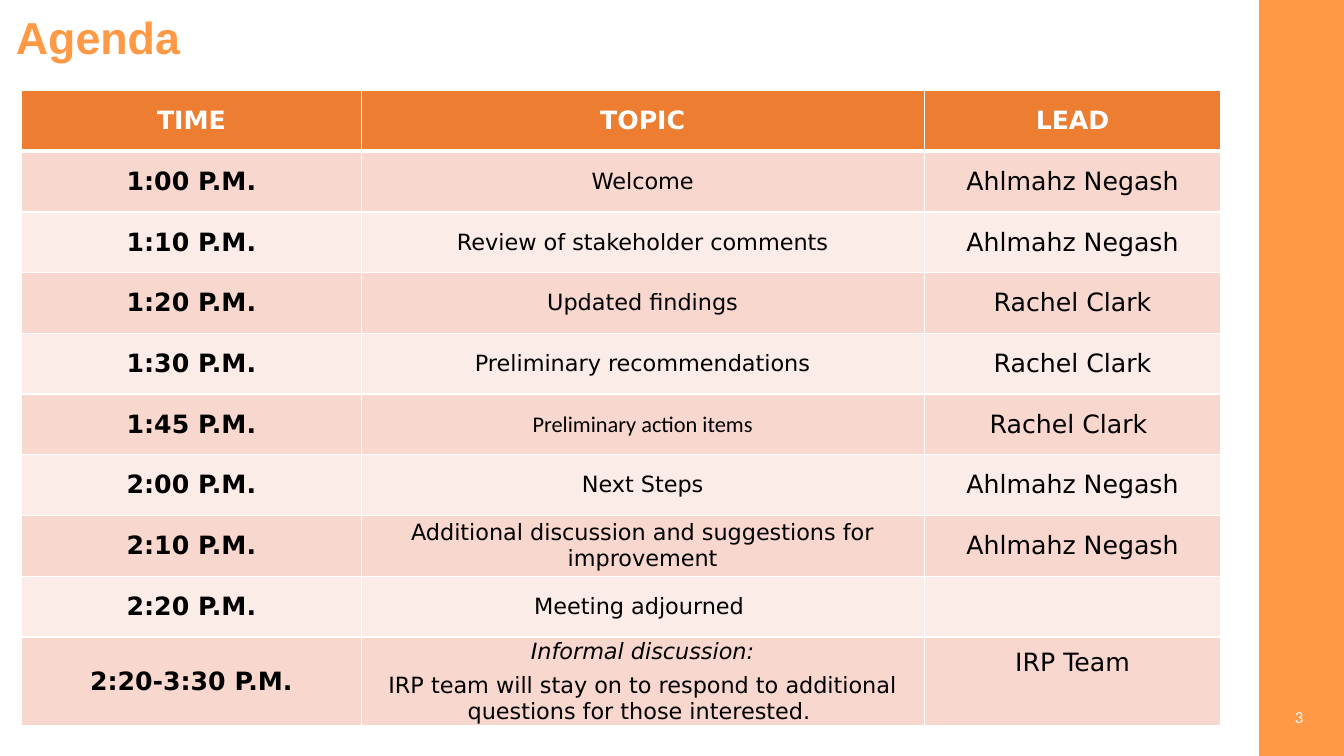
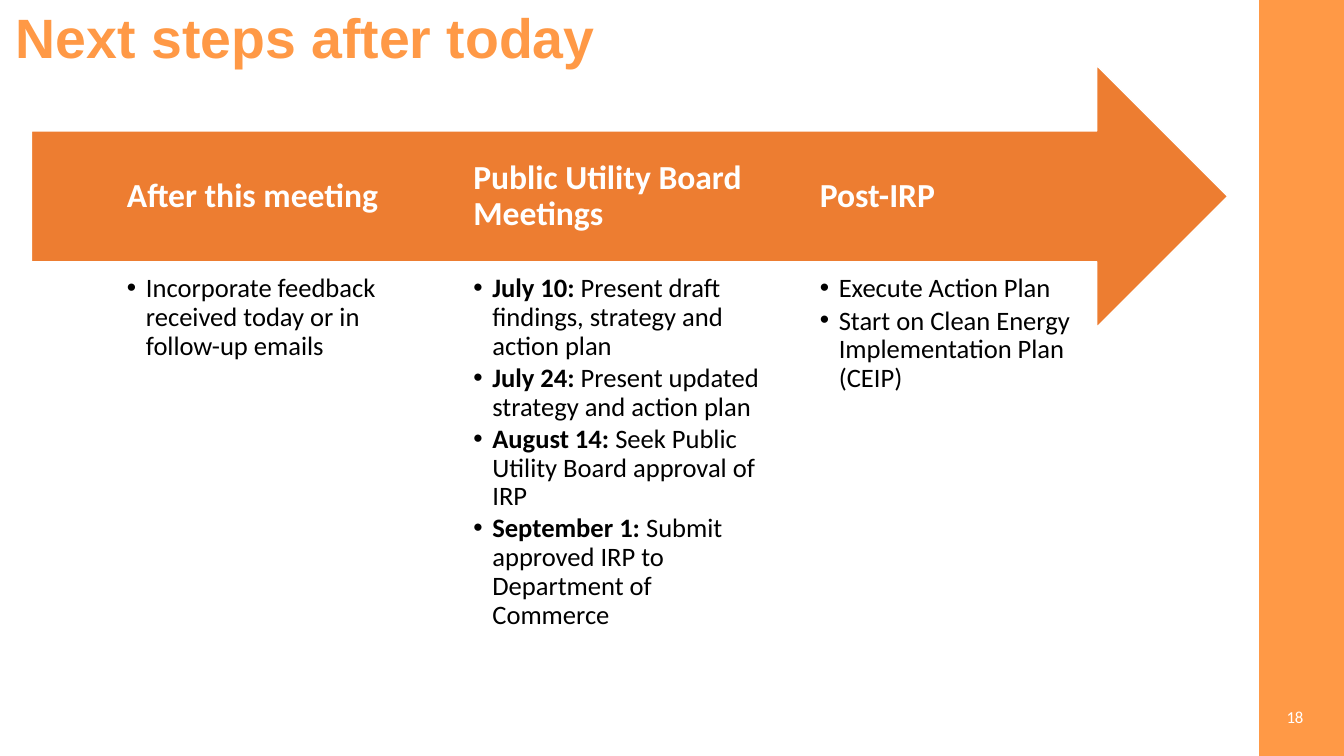
"""Build the agenda and next-steps slides of the planning meeting."""
from dataclasses import dataclass

from lxml import etree
from pptx import Presentation
from pptx import util as u
from pptx.dml.color import RGBColor
from pptx.enum import shapes, text
from pptx.oxml import ns

COLORS = {
    "band": "FF9946",
    "accent": "ED7D31",
    "row_dark": "F8D7CE",
    "row_light": "FCECE8",
    "white": "FFFFFF",
    "black": "000000",
}
TITLE_FONT, BODY_FONT, TABLE_FONT = "Arial", "Calibri", "DejaVu Sans"
SLIDE_WIDTH, SLIDE_HEIGHT = u.Cm(33.87), u.Cm(19.05)
BAND_LEFT = u.Cm(31.75)

TABLE_LEFT, TABLE_TOP = u.Cm(0.55), u.Cm(2.28)
COLUMN_WIDTHS = [u.Cm(8.55), u.Cm(14.19), u.Cm(7.48)]
ROW_HEIGHT, LAST_ROW_HEIGHT = u.Cm(1.53), u.Cm(2.15)
HEADERS = ("TIME", "TOPIC", "LEAD")

STEP_LEFT, STEP_PITCH, STEP_WIDTH = u.Cm(3.2), u.Cm(8.73), u.Cm(7.26)
BULLET_INDENT = u.Cm(0.48)


@dataclass(frozen=True)
class Style:
    font: str
    size: float
    color: str
    bold: bool = False
    italic: bool = False


@dataclass(frozen=True)
class AgendaItem:
    time: str
    topic: str
    lead: str
    topic_font: str = TABLE_FONT
    heading: str = ""
    lead_raise: float = 0


@dataclass(frozen=True)
class Bullet:
    body: str
    date: str = ""


@dataclass(frozen=True)
class Step:
    heading: str
    bullets: tuple[Bullet, ...]


AGENDA = (
    AgendaItem("1:00 P.M.", "Welcome", "Ahlmahz Negash"),
    AgendaItem("1:10 P.M.", "Review of stakeholder comments", "Ahlmahz Negash"),
    AgendaItem("1:20 P.M.", "Updated findings", "Rachel Clark"),
    AgendaItem("1:30 P.M.", "Preliminary recommendations", "Rachel Clark"),
    AgendaItem("1:45 P.M.", "Preliminary action items", "Rachel Clark ", BODY_FONT),
    AgendaItem("2:00 P.M.", "Next Steps", "Ahlmahz Negash"),
    AgendaItem("2:10 P.M.", "Additional discussion and suggestions for improvement",
               "Ahlmahz Negash"),
    AgendaItem("2:20 P.M.", "Meeting adjourned ", ""),
    AgendaItem("2:20-3:30 P.M.",
               "IRP team will stay on to respond to additional questions "
               "for those interested. ",
               "IRP Team", heading="Informal discussion:", lead_raise=0.96),
)

STEPS = (
    Step("After this meeting", (
        Bullet("Incorporate feedback received today or in follow-up emails"),
    )),
    Step("Public Utility Board Meetings", (
        Bullet("Present draft findings, strategy and action plan", "July 10: "),
        Bullet("Present updated strategy and action plan", "July 24: "),
        Bullet("Seek Public Utility Board approval of IRP", "August 14: "),
        Bullet("Submit approved IRP to Department of Commerce", "September 1: "),
    )),
    Step("Post-IRP", (
        Bullet("Execute Action Plan"),
        Bullet("Start on Clean Energy Implementation Plan (CEIP)"),
    )),
)


def rgb(name: str) -> RGBColor:
    return RGBColor.from_string(COLORS[name])


def format_run(run, style: Style) -> None:
    run.font.name = style.font
    run.font.size = u.Pt(style.size)
    run.font.bold = style.bold
    run.font.italic = style.italic
    run.font.color.rgb = rgb(style.color)


def write(paragraph, content: str, style: Style) -> None:
    paragraph.text = content
    for run in paragraph.runs:
        format_run(run, style)


def add_text_frame(slide, left: int, top: int, width: int, height: int,
                   anchor=text.MSO_ANCHOR.MIDDLE):
    frame = slide.shapes.add_textbox(left, top, width, height).text_frame
    frame.word_wrap = True
    frame.vertical_anchor = anchor
    return frame


def add_filled_shape(slide, kind, box: tuple[int, int, int, int],
                     fill: str, line: str) -> None:
    shape = slide.shapes.add_shape(kind, *box)
    shape.shadow.inherit = False
    shape.fill.solid()
    shape.fill.fore_color.rgb = rgb(fill)
    shape.line.color.rgb = rgb(line)
    shape.line.width = u.Pt(1)


def add_base_slide(presentation, title: str, title_size: float, number: int):
    slide = presentation.slides.add_slide(presentation.slide_layouts[6])
    add_filled_shape(slide, shapes.MSO_SHAPE.RECTANGLE,
                     (BAND_LEFT, 0, SLIDE_WIDTH - BAND_LEFT, SLIDE_HEIGHT),
                     "band", "band")
    frame = add_text_frame(slide, u.Cm(0.15), u.Cm(0.2), u.Cm(25.93), u.Cm(1.63))
    paragraph = frame.paragraphs[0]
    write(paragraph, title, Style(TITLE_FONT, title_size, "band", bold=True))
    paragraph.line_spacing = 0.9
    frame = add_text_frame(slide, u.Cm(25.48), u.Cm(17.55), u.Cm(7.62), u.Cm(1.02))
    paragraph = frame.paragraphs[0]
    write(paragraph, str(number), Style(BODY_FONT, 12, "white"))
    paragraph.alignment = text.PP_ALIGN.RIGHT
    return slide


def set_borders(cell, bottom_points: float) -> None:
    properties = cell._tc.get_or_add_tcPr()
    widths = {"a:lnL": 1, "a:lnR": 1, "a:lnT": 1, "a:lnB": bottom_points}
    for tag, points in widths.items():
        line = etree.SubElement(properties, ns.qn(tag), w=str(u.Pt(points)))
        fill = etree.SubElement(line, ns.qn("a:solidFill"))
        etree.SubElement(fill, ns.qn("a:srgbClr"), val=COLORS["white"])


def fill_cell(cell, lines: list[tuple[str, Style]], fill: str,
              bottom_border: float = 1) -> None:
    set_borders(cell, bottom_border)
    cell.fill.solid()
    cell.fill.fore_color.rgb = rgb(fill)
    cell.vertical_anchor = text.MSO_ANCHOR.MIDDLE
    cell.margin_left = cell.margin_right = u.Cm(0.18)
    cell.margin_top = cell.margin_bottom = 0
    frame = cell.text_frame
    for index, (content, style) in enumerate(lines):
        paragraph = frame.add_paragraph() if index else frame.paragraphs[0]
        write(paragraph, content, style)
        paragraph.alignment = text.PP_ALIGN.CENTER
        if index:
            paragraph.space_before = u.Pt(6)


def add_agenda_table(slide) -> None:
    height = ROW_HEIGHT * len(AGENDA) + LAST_ROW_HEIGHT
    table = slide.shapes.add_table(len(AGENDA) + 1, len(HEADERS), TABLE_LEFT, TABLE_TOP,
                                   sum(COLUMN_WIDTHS), height).table
    for column, width in zip(table.columns, COLUMN_WIDTHS):
        column.width = width
    for row in table.rows:
        row.height = ROW_HEIGHT
    table.rows[len(AGENDA)].height = LAST_ROW_HEIGHT

    header_style = Style(TABLE_FONT, 18, "white", bold=True)
    for index, header in enumerate(HEADERS):
        fill_cell(table.cell(0, index), [(header, header_style)], "accent", 3)

    time_style = Style(TABLE_FONT, 18, "black", bold=True)
    lead_style = Style(TABLE_FONT, 18, "black")
    heading_style = Style(TABLE_FONT, 16, "black", italic=True)
    for index, item in enumerate(AGENDA, start=1):
        fill = "row_dark" if index % 2 else "row_light"
        topic = [(item.topic, Style(item.topic_font, 16, "black"))]
        if item.heading:
            topic.insert(0, (item.heading, heading_style))
        contents = ([(item.time, time_style)], topic, [(item.lead, lead_style)])
        for column, lines in enumerate(contents):
            fill_cell(table.cell(index, column), lines, fill)
        table.cell(index, 2).margin_bottom = u.Cm(item.lead_raise)


def add_bullet_mark(paragraph) -> None:
    properties = paragraph._p.get_or_add_pPr()
    properties.set("marL", str(BULLET_INDENT))
    properties.set("indent", str(-BULLET_INDENT))
    etree.SubElement(properties, ns.qn("a:buFont"), typeface=TITLE_FONT)
    etree.SubElement(properties, ns.qn("a:buChar"), char="•")


def add_step(slide, step: Step, left: int) -> None:
    frame = add_text_frame(slide, left, u.Cm(3.3), STEP_WIDTH, u.Cm(3.3))
    frame.margin_left = frame.margin_right = 0
    frame.margin_top = frame.margin_bottom = u.Cm(0.69)
    paragraph = frame.paragraphs[0]
    write(paragraph, step.heading, Style(BODY_FONT, 24, "white", bold=True))
    paragraph.line_spacing = 0.9

    frame = add_text_frame(slide, left, u.Cm(6.93), STEP_WIDTH, u.Cm(10),
                           text.MSO_ANCHOR.TOP)
    frame.margin_left = frame.margin_right = 0
    frame.margin_top = frame.margin_bottom = 0
    for index, bullet in enumerate(step.bullets):
        paragraph = frame.add_paragraph() if index else frame.paragraphs[0]
        paragraph.line_spacing = 0.9
        paragraph.space_after = u.Pt(2.4)
        add_bullet_mark(paragraph)
        if bullet.date:
            write(paragraph, bullet.date, Style(BODY_FONT, 19, "black", bold=True))
        run = paragraph.add_run()
        run.text = bullet.body
        format_run(run, Style(BODY_FONT, 19, "black"))


def main() -> None:
    presentation = Presentation()
    presentation.slide_width = SLIDE_WIDTH
    presentation.slide_height = SLIDE_HEIGHT

    agenda_slide = add_base_slide(presentation, "Agenda", 32, 3)
    add_agenda_table(agenda_slide)

    steps_slide = add_base_slide(presentation, "Next steps after today", 39.6, 18)
    add_filled_shape(steps_slide, shapes.MSO_SHAPE.RIGHT_ARROW,
                     (u.Cm(0.79), u.Cm(1.65), u.Cm(30.15), u.Cm(6.6)),
                     "accent", "white")
    for index, step in enumerate(STEPS):
        add_step(steps_slide, step, STEP_LEFT + index * STEP_PITCH)

    presentation.save("out.pptx")


if __name__ == "__main__":
    main()
